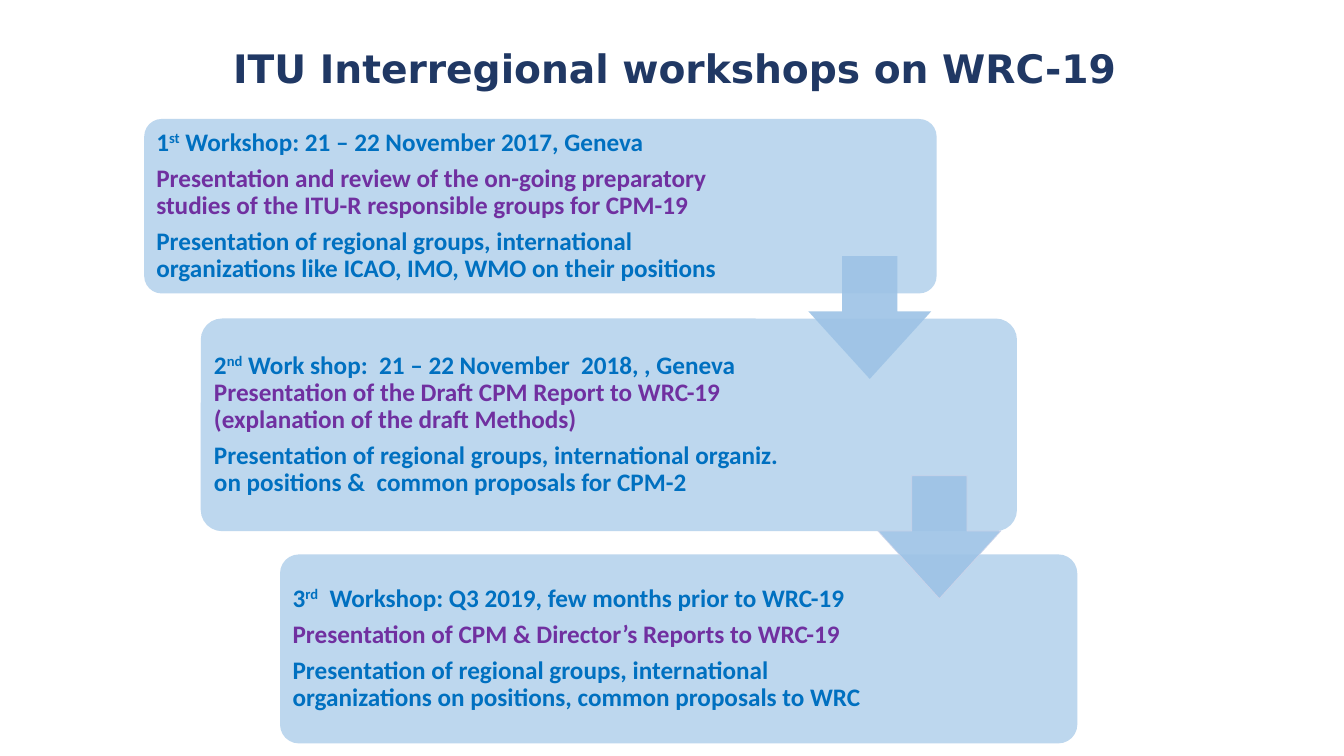
from lxml.etree import SubElement
from pptx import Presentation
from pptx.dml.color import RGBColor
from pptx.enum.shapes import MSO_SHAPE as Preset
from pptx.enum.text import MSO_ANCHOR as Anchor, PP_ALIGN as Align
from pptx.oxml.ns import qn
from pptx.util import Pt

COLORS = {
    "title": "203864",
    "panel": "BDD7EE",
    "arrow": "9DC3E6",
    "edge": "CFD5EA",
    "blue": "0070C0",
    "purple": "7030A0",
}
CORNER = 0.1
CORNER_INSET = CORNER * 0.293
ARROW_SIZE = 87.8

WORKSHOPS = [
    {
        "box": (103, 85, 566, 124.6),
        "text_width": 419,
        "paras": [
            [("1", "blue"), ("st", "blue", 30),
             (" Workshop: 21 – 22 November 2017, Geneva", "blue")],
            [("Presentation and review of the on-going preparatory studies "
              "of the ITU-R responsible groups for CPM-19", "purple")],
            [("Presentation of regional groups, international organizations "
              "like ICAO, IMO, WMO on their positions", "blue")],
        ],
    },
    {
        "box": (143.4, 227.5, 583, 151.9),
        "text_width": 431.3,
        "paras": [
            [("2", "blue"), ("nd", "blue", 30),
             (" Work shop:  21 – 22 November  2018, , Geneva ", "blue"),
             ("Presentation of the Draft CPM Report to WRC-19 "
              "(explanation of the draft Methods)", "purple")],
            [("Presentation of regional groups, international organiz. "
              "on positions &  common proposals for CPM-2", "blue")],
        ],
    },
    {
        "box": (200, 396, 569.5, 135),
        "text_width": 422,
        "paras": [
            [("3", "blue"), ("rd", "blue", 30),
             ("  Workshop: Q3 2019, few months prior to WRC-19", "blue")],
            [("Presentation of CPM & Director’s Reports to WRC-19", "purple")],
            [("Presentation of regional groups, international organizations "
              "on positions, common proposals to WRC", "blue")],
        ],
    },
]
ARROWS = [(577.4, 182.9, None), (627.1, 339.8, "edge")]


def rgb(name):
    return RGBColor.from_string(COLORS[name])


def set_alpha(color_format, percent):
    color = color_format._xFill.find(qn("a:srgbClr"))
    SubElement(color, qn("a:alpha")).set("val", str(percent * 1000))


def add_text(page, box, paras, *, font, size, align=Align.LEFT,
             inset=(5, 5), spacing=1.0, after=0):
    frame = page.shapes.add_textbox(*map(Pt, box)).text_frame
    frame.word_wrap = True
    frame.vertical_anchor = Anchor.MIDDLE
    frame.margin_left = frame.margin_right = Pt(inset[0])
    frame.margin_top = frame.margin_bottom = Pt(inset[1])
    for index, spans in enumerate(paras):
        para = frame.add_paragraph() if index else frame.paragraphs[0]
        para.alignment = align
        para.line_spacing = spacing
        para.space_after = Pt(after)
        for text, color, *raised in spans:
            span = para.add_run()
            span.text = text
            span.font.name = font
            span.font.size = Pt(size)
            span.font.bold = True
            span.font.color.rgb = rgb(color)
            if raised:
                span._r.get_or_add_rPr().set("baseline", str(raised[0] * 1000))


def add_block(page, preset, box, color, adjustments):
    shape = page.shapes.add_shape(preset, *map(Pt, box))
    shape.shadow.inherit = False
    for index, value in enumerate(adjustments):
        shape.adjustments[index] = value
    shape.fill.solid()
    shape.fill.fore_color.rgb = rgb(color)
    shape.line.fill.background()
    return shape


def add_title(page, box):
    add_text(page, box, [[("ITU Interregional workshops on WRC-19", "title")]],
             font="DejaVu Sans", size=28, align=Align.CENTER, inset=(7.2, 3.6))


def add_workshop(page, box, text_width, paras):
    left, top, width, height = box
    add_block(page, Preset.ROUNDED_RECTANGLE, box, "panel", [CORNER])
    inset = height * CORNER_INSET
    text_box = (left + inset, top + inset, text_width, height - 2 * inset)
    add_text(page, text_box, paras, font="Calibri", size=18,
             spacing=0.9, after=6.3)


def add_arrow(page, left, top, edge):
    arrow = add_block(page, Preset.DOWN_ARROW,
                      (left, top, ARROW_SIZE, ARROW_SIZE), "arrow",
                      [0.45, 0.55])
    set_alpha(arrow.fill.fore_color, 90)
    if edge:
        arrow.line.color.rgb = rgb(edge)
        arrow.line.width = Pt(0.5)
        set_alpha(arrow.line.color, 90)


def main():
    deck = Presentation()
    deck.slide_width, deck.slide_height = Pt(960), Pt(540)
    page = deck.slides.add_slide(deck.slide_layouts[6])
    add_title(page, (143.4, 28.1, 676.8, 41))
    for workshop in WORKSHOPS:
        add_workshop(page, **workshop)
    for left, top, edge in ARROWS:
        add_arrow(page, left, top, edge)
    deck.save("out.pptx")


if __name__ == "__main__":
    main()
